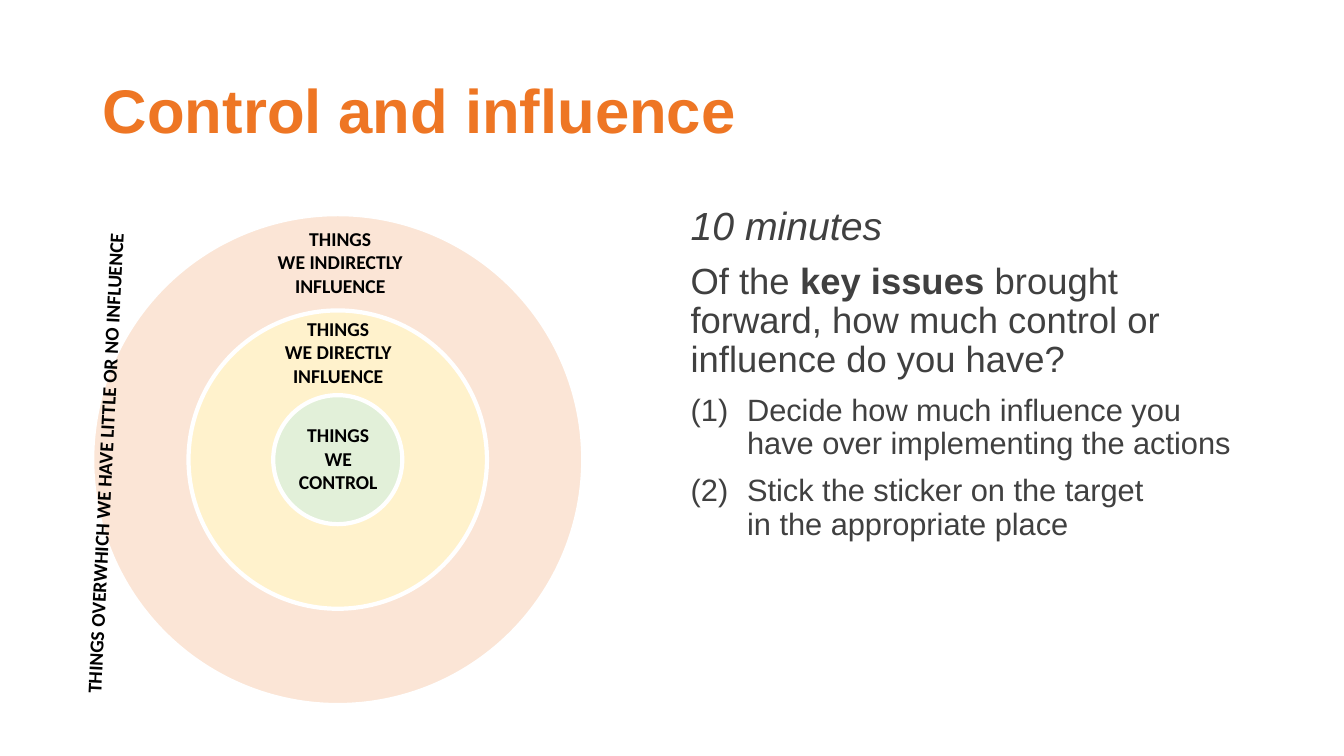
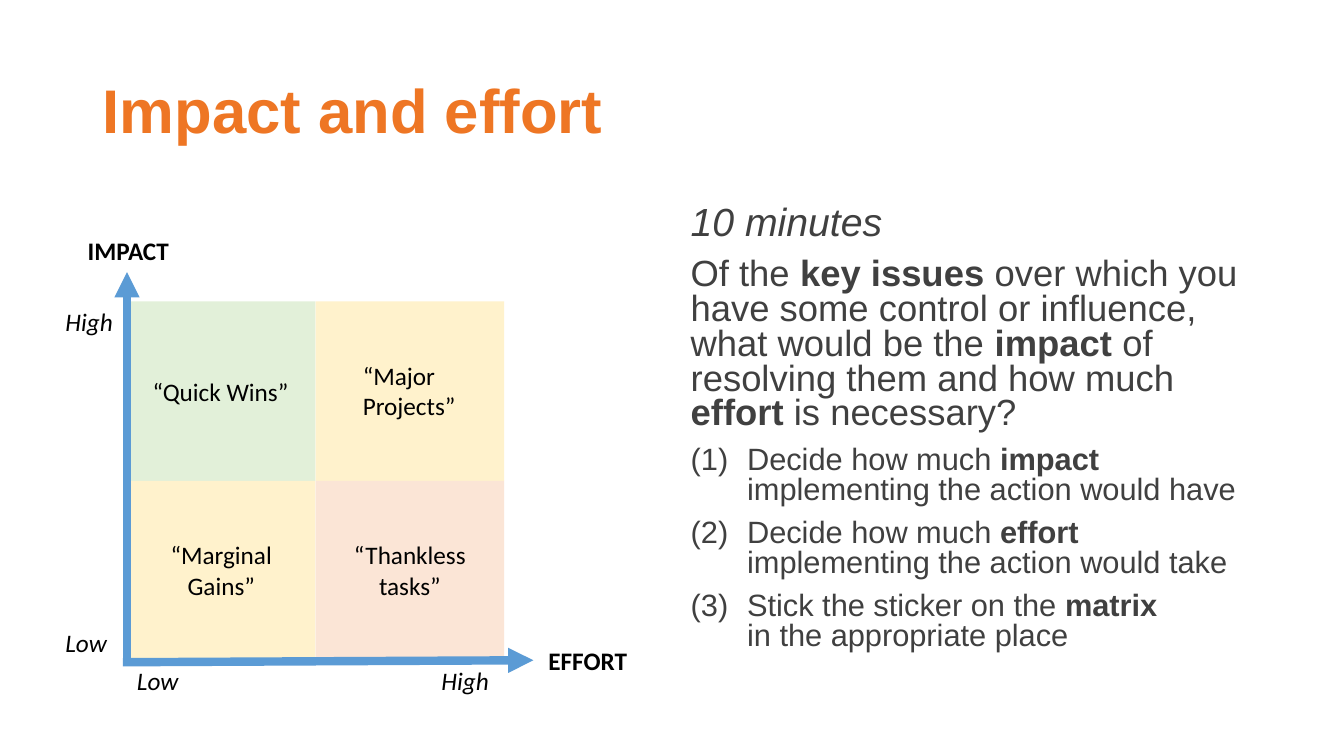
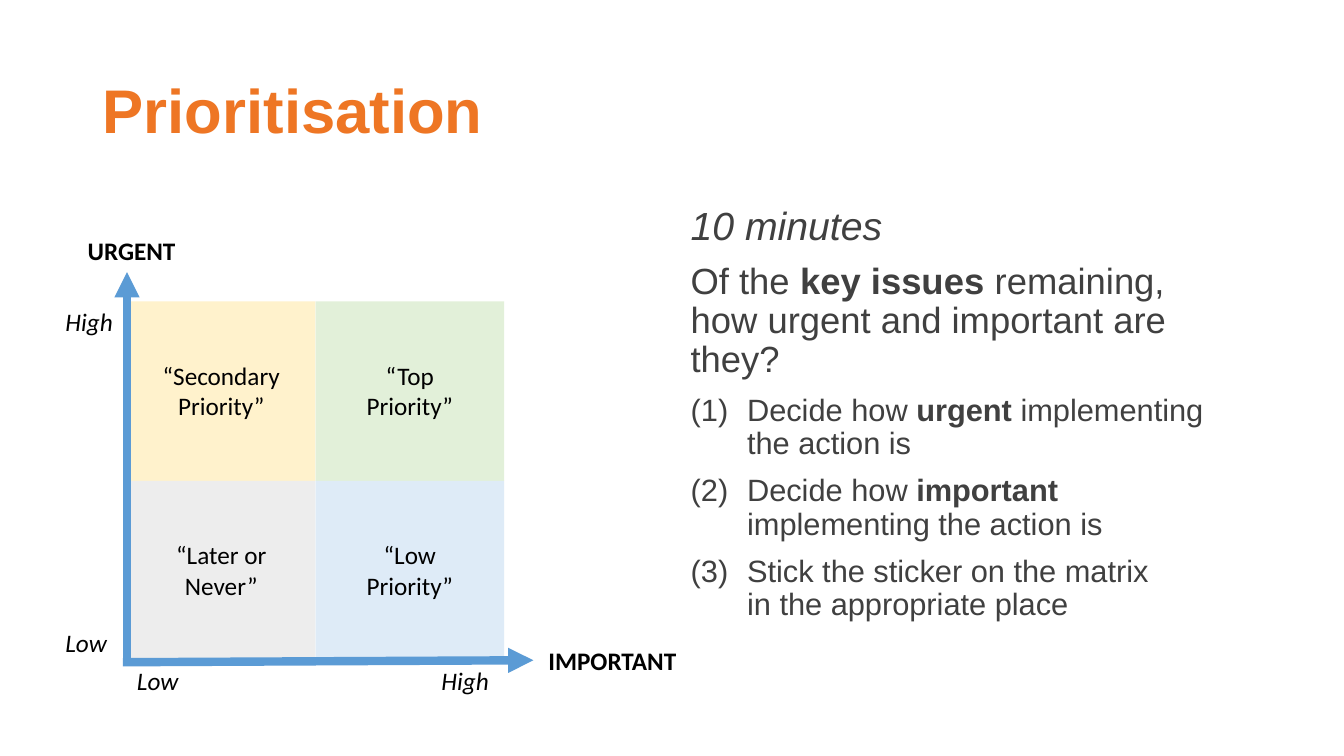
from lxml import etree
from pptx import Presentation
from pptx.dml.color import RGBColor
from pptx.enum.shapes import MSO_CONNECTOR as CONN, MSO_SHAPE as SHAPE
from pptx.enum.text import MSO_ANCHOR as ANCHOR, MSO_AUTO_SIZE as FIT, PP_ALIGN as ALIGN
from pptx.oxml.ns import qn
from pptx.util import Inches, Pt

COLORS = {
    "title": "EE7624", "body": "404040", "label": "000000", "axis": "5B9BD5",
    "white": "FFFFFF", "orange": "FBE5D6", "yellow": "FFF2CC",
    "green": "E2F0D9", "grey": "EDEDED", "blue": "DEEBF7",
}


def rgb(name):
    return RGBColor.from_string(COLORS[name])


class Deck:
    """Shared style and the slide being built."""
    heading_font, label_font = "Arial", "Calibri"

    def __init__(self):
        self.prs = Presentation()
        self.prs.slide_width, self.prs.slide_height = Inches(13.33), Inches(7.5)
        self.s = None

    def run(self, p, text, font, size, color, bold=False, italic=False):
        r = p.add_run()
        r.text = text
        f = r.font
        f.name, f.size, f.bold, f.italic = font, Pt(size), bold, italic
        f.color.rgb = rgb(color)

    def place(self, sp, x, y, w, h):
        sp.left, sp.top, sp.width, sp.height = map(Inches, (x, y, w, h))

    def slide(self, title):
        self.s = self.prs.slides.add_slide(self.prs.slide_layouts[1])
        sp = self.s.shapes.title
        self.place(sp, 0.92, 0.4, 11.5, 1.45)
        tf = sp.text_frame
        tf.auto_size, tf.vertical_anchor = FIT.NONE, ANCHOR.MIDDLE
        p = tf.paragraphs[0]
        p.alignment, p.line_spacing = ALIGN.LEFT, 0.9
        self.run(p, title, self.heading_font, 44, "title", bold=True)

    def body(self, question, steps, spacing=0.9):
        """Time, question and numbered steps; *stars* enclose bold words."""
        sp = self.s.placeholders[1]
        self.place(sp, 6.75, 2, 5.65, 4.76)
        tf = sp.text_frame
        tf.auto_size = FIT.NONE
        items = [("10 minutes", 28), (question, 26)] + [(step, 22) for step in steps]
        for i, (text, size) in enumerate(items):
            p = tf.paragraphs[0] if i == 0 else tf.add_paragraph()
            p.line_spacing, p.space_before = spacing, Pt(10 if i else 0)
            self.bullet(p, numbered=i > 1)
            for j, part in enumerate(text.split("*")):
                for k, line in enumerate(part.split("\n")):
                    if k:
                        p.add_line_break()
                    if line:
                        self.run(p, line, self.heading_font, size, "body",
                                 bold=j % 2 == 1, italic=i == 0)

    def bullet(self, p, numbered):
        pPr = p._p.get_or_add_pPr()
        indent = Inches(0.56) if numbered else 0
        pPr.set("marL", str(indent))
        pPr.set("indent", str(-indent))
        if numbered:
            etree.SubElement(pPr, qn("a:buAutoNum")).set("type", "arabicParenBoth")
        else:
            etree.SubElement(pPr, qn("a:buNone"))

    def shape(self, kind, x, y, w, h, fill, line=None):
        sp = self.s.shapes.add_shape(kind, *map(Inches, (x, y, w, h)))
        sp.shadow.inherit = False
        sp.fill.solid()
        sp.fill.fore_color.rgb = rgb(fill)
        if line:
            sp.line.color.rgb, sp.line.width = rgb(line), Pt(3)
        else:
            sp.line.fill.background()

    def label(self, text, x, y, w, h=0.4, size=18, align=ALIGN.LEFT, bold=False, italic=False):
        sp = self.s.shapes.add_textbox(*map(Inches, (x, y, w, h)))
        tf = sp.text_frame
        tf.word_wrap, tf.auto_size = False, FIT.SHAPE_TO_FIT_TEXT
        for i, line in enumerate(text.split("\n")):
            p = tf.add_paragraph() if i else tf.paragraphs[0]
            p.alignment = align
            self.run(p, line, self.label_font, size, "label", bold, italic)
        return sp

    def arrow(self, x1, y1, x2, y2):
        c = self.s.shapes.add_connector(CONN.STRAIGHT, *map(Inches, (x1, y1, x2, y2)))
        c.line.color.rgb, c.line.width = rgb("axis"), Pt(6)
        etree.SubElement(c.line._get_or_add_ln(), qn("a:tailEnd")).set("type", "triangle")
        etree.SubElement(c._element.spPr, qn("a:effectLst"))

    def matrix(self, y_name, y_width, x_name, x_width, cells):
        """Two by two grid, row by row from the top, with arrows as axes."""
        left, top, cw, ch = 1.26, 2.99, 1.87, 1.78
        for i, (_, fill, _, _) in enumerate(cells):
            self.shape(SHAPE.RECTANGLE, left + i % 2 * cw, top + i // 2 * ch, cw, ch, fill)
        self.arrow(left, 6.57, left, 2.7)
        self.arrow(1.22, 6.57, 5.29, 6.55)
        # Axis names and ends
        for name, x, y, w in ((y_name, 0.77, 2.29, y_width), (x_name, 5.34, 6.35, x_width)):
            self.label(name, x, y, w, bold=True)
        for name, x, y, w in (("High", 0.55, top, 0.68), ("High", 4.28, 6.55, 0.68),
                              ("Low", left, 6.55, 0.62), ("Low", 0.55, 6.17, 0.62)):
            self.label(name, x, y, w, italic=True)
        # Cell names, centred on their cells
        for i, (text, _, w, align) in enumerate(cells):
            h = 0.71 if "\n" in text else 0.4
            self.label(text, left + (i % 2 + 0.5) * cw - w / 2,
                       top + (i // 2 + 0.5) * ch - h / 2, w, h, align=align)


def main():
    deck = Deck()
    mid = ALIGN.CENTER

    # Control and influence
    deck.slide("Control and influence")
    deck.body("Of the *key issues* brought forward, how much control or influence do you have?",
              ["Decide how much influence you have over implementing the actions",
               "Stick the sticker on the target\nin the appropriate place"])
    cx, cy = 3.35, 4.56
    for d, fill in ((4.87, "orange"), (2.96, "yellow"), (1.28, "green")):
        deck.shape(SHAPE.OVAL, cx - d / 2, cy - d / 2, d, d, fill, "white")
    for text, x, y, w in (("THINGS\nWE\nCONTROL", 2.86, 4.15, 0.99),
                          ("THINGS\nWE DIRECTLY\nINFLUENCE", 2.72, 3.09, 1.27),
                          ("THINGS\nWE INDIRECTLY\nINFLUENCE", 2.65, 2.2, 1.45)):
        deck.label(text, x, y, w, 0.81, 14, mid, bold=True)
    outer = deck.label("THINGS OVERWHICH WE HAVE LITTLE OR NO INFLUENCE",
                       0.76, 2.01, 5.24, 5.15, 14, mid, bold=True)
    outer.rotation = 272.8
    tf = outer.text_frame
    tf.auto_size, tf.word_wrap = FIT.NONE, True
    tf.margin_top, tf.margin_right = Inches(0.12), Inches(0.35)

    # Impact and effort
    deck.slide("Impact and effort")
    deck.body("Of the *key issues* over which you have some control or influence, what would be "
              "the *impact* of resolving them and how much *effort* is necessary?",
              ["Decide how much *impact* implementing the action would have",
               "Decide how much *effort* implementing the action would take",
               "Stick the sticker on the *matrix*\nin the appropriate place"], spacing=0.8)
    deck.matrix("IMPACT", 1.02, "EFFORT", 0.99, [
        ("“Quick Wins”", "green", 1.56, ALIGN.LEFT),
        ("“Major\nProjects”", "yellow", 1.13, ALIGN.LEFT),
        ("“Marginal\nGains”", "yellow", 1.27, mid),
        ("“Thankless\ntasks”", "orange", 1.32, mid)])

    # Prioritisation
    deck.slide("Prioritisation")
    deck.body("Of the *key issues* remaining, how urgent and important are they?",
              ["Decide how *urgent* implementing the action is",
               "Decide how *important* implementing the action is",
               "Stick the sticker on the matrix\nin the appropriate place"])
    deck.matrix("URGENT", 1.09, "IMPORTANT", 1.49, [
        ("“Secondary\nPriority”", "yellow", 1.38, mid),
        ("“Top\nPriority”", "green", 1.13, mid),
        ("“Later or\nNever”", "grey", 1.11, mid),
        ("“Low\nPriority”", "blue", 1.1, mid)])

    deck.prs.save("out.pptx")


if __name__ == "__main__":
    main()
